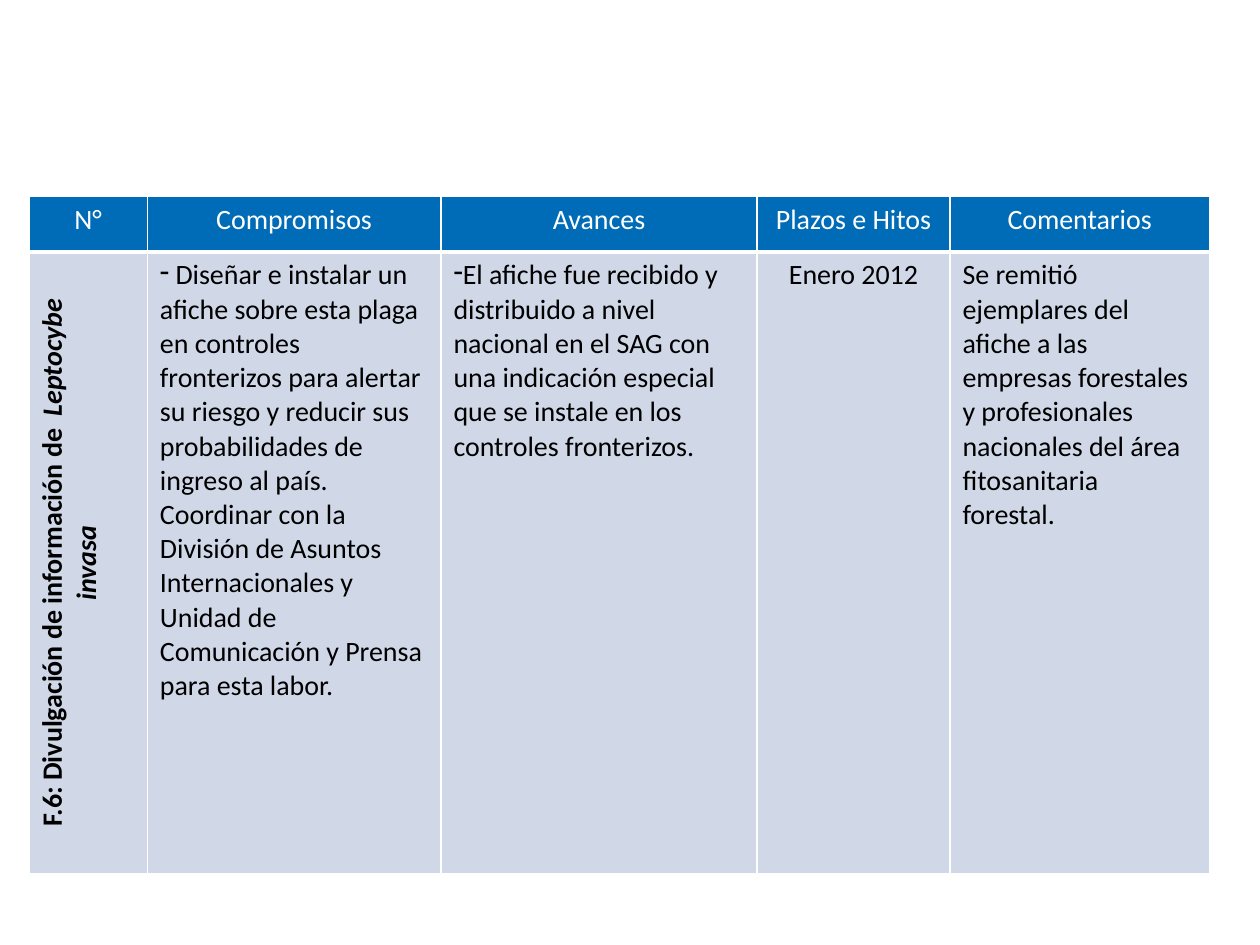
from lxml.etree import SubElement
from pptx import Presentation
from pptx.dml.color import RGBColor
from pptx.enum.text import PP_ALIGN
from pptx.oxml.ns import qn
from pptx.util import Inches, Pt

COLORS = {"header": "006CB7", "body": "D0D8E8", "line": "FFFFFF",
          "light": "FFFFFF", "dark": "000000"}
COLUMN_WIDTHS = [0.94, 2.33, 2.51, 1.53, 2.06]
ROW_HEIGHTS = [0.44, 3.56]

HEADINGS = ["N°", "Compromisos", "Avances", "Plazos e Hitos", "Comentarios"]
TOPIC = [("F.6: Divulgación de información de  ", {"bold": True}),
         ("Leptocybe invasa", {"bold": True, "italic": True})]
COMMITMENT = (" Diseñar e instalar un afiche sobre esta plaga en controles fronterizos "
              "para alertar su riesgo y reducir sus probabilidades de ingreso al país. "
              "Coordinar con la División de Asuntos Internacionales y Unidad de "
              "Comunicación y Prensa para esta labor.")
PROGRESS = ("El afiche fue recibido y distribuido a nivel nacional en el SAG con una "
            "indicación especial que se instale en los controles fronterizos.")
DEADLINE = "Enero 2012"
COMMENT = ("Se remitió ejemplares del afiche a las empresas forestales y profesionales "
           "nacionales del área fitosanitaria forestal.")


class PageBuilder:
    font = {"name": "Calibri", "size": Pt(16), "bold": False, "italic": False}

    def __init__(self, page):
        self.page = page

    def table(self, left, top, widths, heights):
        frame = self.page.shapes.add_table(
            len(heights), len(widths), Inches(left), Inches(top),
            Inches(sum(widths)), Inches(sum(heights)))
        table = frame.table
        for column, width in zip(table.columns, widths):
            column.width = Inches(width)
        for row, height in zip(table.rows, heights):
            row.height = Inches(height)
        return table

    def borders(self, cell, bottom):
        """Draw thin lines round the cell, with its own weight at the bottom."""
        properties = cell._tc.get_or_add_tcPr()
        for side, weight in {"L": 1, "R": 1, "T": 1, "B": bottom}.items():
            line = SubElement(properties, qn(f"a:ln{side}"), w=str(Pt(weight)))
            fill = SubElement(line, qn("a:solidFill"))
            SubElement(fill, qn("a:srgbClr"), val=COLORS["line"])

    def cell(self, cell, spans, fill, color, centered=False, dash=False,
             upward=False, bottom=1):
        """Style a cell and write its (text, font values) spans."""
        self.borders(cell, bottom)
        cell.fill.solid()
        cell.fill.fore_color.rgb = RGBColor.from_string(COLORS[fill])
        if upward:
            cell._tc.get_or_add_tcPr().set("vert", "vert270")
        para = cell.text_frame.paragraphs[0]
        para.alignment = PP_ALIGN.CENTER if centered else PP_ALIGN.LEFT
        if dash:
            SubElement(para._p.get_or_add_pPr(), qn("a:buChar"), char="-")
        for text, values in spans:
            span = para.add_run()
            span.text = text
            for name, value in {**self.font, **values}.items():
                setattr(span.font, name, value)
            span.font.color.rgb = RGBColor.from_string(COLORS[color])


def main():
    deck = Presentation()
    deck.slide_width, deck.slide_height = Inches(10), Inches(7.5)
    builder = PageBuilder(deck.slides.add_slide(deck.slide_layouts[6]))
    table = builder.table(0.23, 1.56, COLUMN_WIDTHS, ROW_HEIGHTS)

    for index, heading in enumerate(HEADINGS):
        builder.cell(table.cell(0, index), [(heading, {})], "header", "light",
                     centered=True, bottom=3)

    details = [
        (TOPIC, {"centered": True, "upward": True}),
        ([(COMMITMENT, {})], {"dash": True}),
        ([(PROGRESS, {})], {"dash": True}),
        ([(DEADLINE, {})], {"centered": True}),
        ([(COMMENT, {})], {}),
    ]
    for index, (spans, options) in enumerate(details):
        builder.cell(table.cell(1, index), spans, "body", "dark", **options)

    deck.save("out.pptx")


if __name__ == "__main__":
    main()
